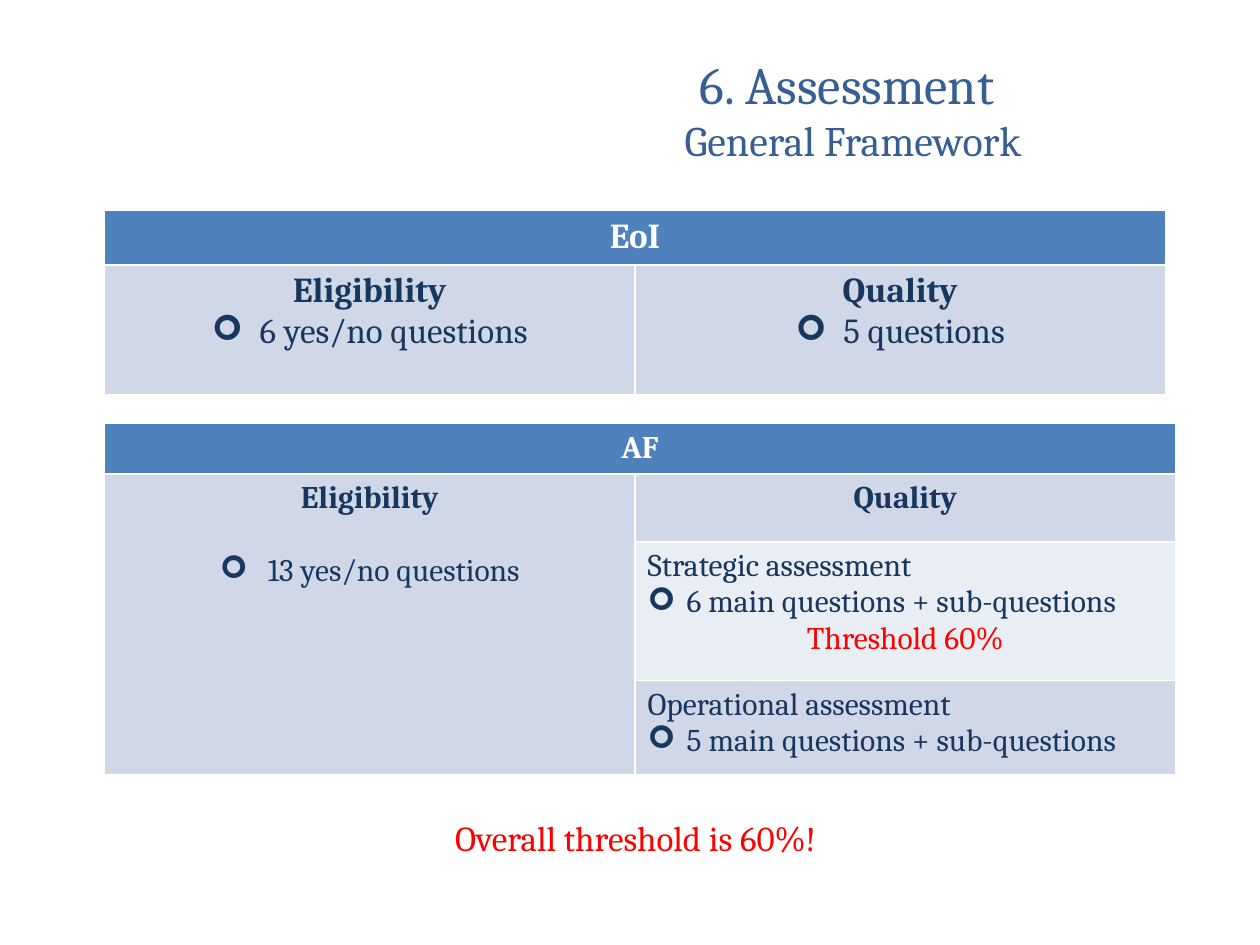
from lxml.etree import SubElement
from pptx import Presentation
from pptx.dml.color import RGBColor
from pptx.enum.text import PP_ALIGN
from pptx.oxml.ns import qn
from pptx.util import Inches, Pt

COLORS = {
    "title": "376092", "navy": "17375E", "red": "FF0000", "white": "FFFFFF",
    "header": "4F81BD", "band": "D0D8E8", "light": "E9EDF4",
}
FONT = "Cambria"


def line(text, size, color="navy", bold=False, align=PP_ALIGN.CENTER, indent=0, before=0):
    return dict(text=text, size=size, color=color, bold=bold,
                align=align, indent=indent, before=before)


def heading(text, size, color="navy"):
    return line(text, size, color, bold=True)


def assessment(text):
    return line(text, 18, align=PP_ALIGN.LEFT)


def questions(text):
    return line(text, 18, align=PP_ALIGN.LEFT, indent=0.31)


TEXTS = [
    ((0.83, 6.43, 8.43, 0.55), [line("Overall threshold is 60%!", 20, "red")]),
    ((3.66, 0.36, 6.22, 0.79), [line("6. Assessment ", 30, "title"),
                                line("General Framework", 24, "title")]),
]

TABLES = [
    dict(
        top=1.67, columns=[4.21, 4.21], rows=[0.41, 1.03], merges=[(0, 0, 0, 1)],
        cells={
            (0, 0): ("header", [heading("EoI", 20, "white")]),
            (1, 0): ("band", [heading("Eligibility", 20),
                              line("6 yes/no questions", 20, indent=0.38)]),
            (1, 1): ("band", [heading("Quality", 20),
                              line("5 questions", 20, indent=0.38)]),
        },
    ),
    dict(
        top=3.36, columns=[4.21, 4.29], rows=[0.38, 0.54, 1.1, 0.75],
        merges=[(0, 0, 0, 1), (1, 0, 3, 0)],
        cells={
            (0, 0): ("header", [heading("AF", 18, "white")]),
            (1, 0): ("band", [heading("Eligibility", 18),
                              line("13 yes/no questions", 18, indent=0.38, before=21)]),
            (1, 1): ("band", [heading("Quality", 18)]),
            (2, 1): ("light", [assessment("Strategic assessment"),
                               questions("6 main questions + sub-questions"),
                               line("Threshold 60%", 18, "red")]),
            (3, 1): ("band", [assessment("Operational assessment"),
                              questions("5 main questions + sub-questions")]),
        },
    ),
]
TABLE_LEFT = 0.83


def rgb(name):
    return RGBColor.from_string(COLORS[name])


def add_bullet(paragraph, indent):
    properties = paragraph._p.get_or_add_pPr()
    properties.set("marL", str(Inches(indent)))
    properties.set("indent", str(-Inches(indent)))
    SubElement(properties, qn("a:buFont")).set("typeface", "Wingdings")
    SubElement(properties, qn("a:buChar")).set("char", "➢")


def write(frame, lines):
    frame.word_wrap = True
    for number, item in enumerate(lines):
        paragraph = frame.add_paragraph() if number else frame.paragraphs[0]
        paragraph.text = item["text"]
        paragraph.alignment = item["align"]
        if item["before"]:
            paragraph.space_before = Pt(item["before"])
        if item["indent"]:
            add_bullet(paragraph, item["indent"])
        font = paragraph.font
        font.name = FONT
        font.size = Pt(item["size"])
        font.bold = item["bold"]
        font.color.rgb = rgb(item["color"])


def add_grid(slide, content):
    columns, rows = content["columns"], content["rows"]
    table = slide.shapes.add_table(
        len(rows), len(columns), Inches(TABLE_LEFT), Inches(content["top"]),
        Inches(sum(columns)), Inches(sum(rows))).table
    for column, width in zip(table.columns, columns):
        column.width = Inches(width)
    for row, height in zip(table.rows, rows):
        row.height = Inches(height)
    for top, left, bottom, right in content["merges"]:
        table.cell(top, left).merge(table.cell(bottom, right))
    for position, (fill, lines) in content["cells"].items():
        cell = table.cell(*position)
        cell.fill.solid()
        cell.fill.fore_color.rgb = rgb(fill)
        write(cell.text_frame, lines)


def main():
    deck = Presentation()
    deck.slide_width, deck.slide_height = Inches(10), Inches(7.5)
    slide = deck.slides.add_slide(deck.slide_layouts[6])
    for place, lines in TEXTS:
        write(slide.shapes.add_textbox(*map(Inches, place)).text_frame, lines)
    for content in TABLES:
        add_grid(slide, content)
    deck.save("out.pptx")


if __name__ == "__main__":
    main()
